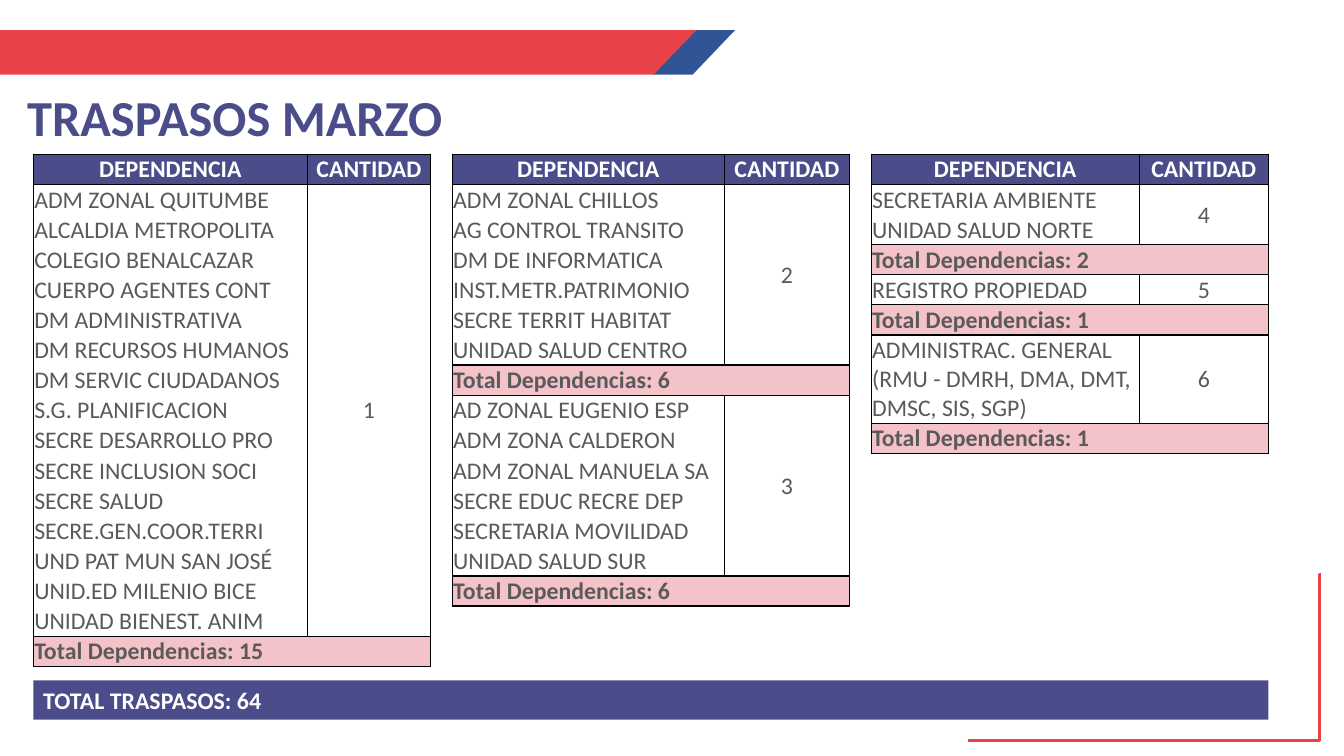
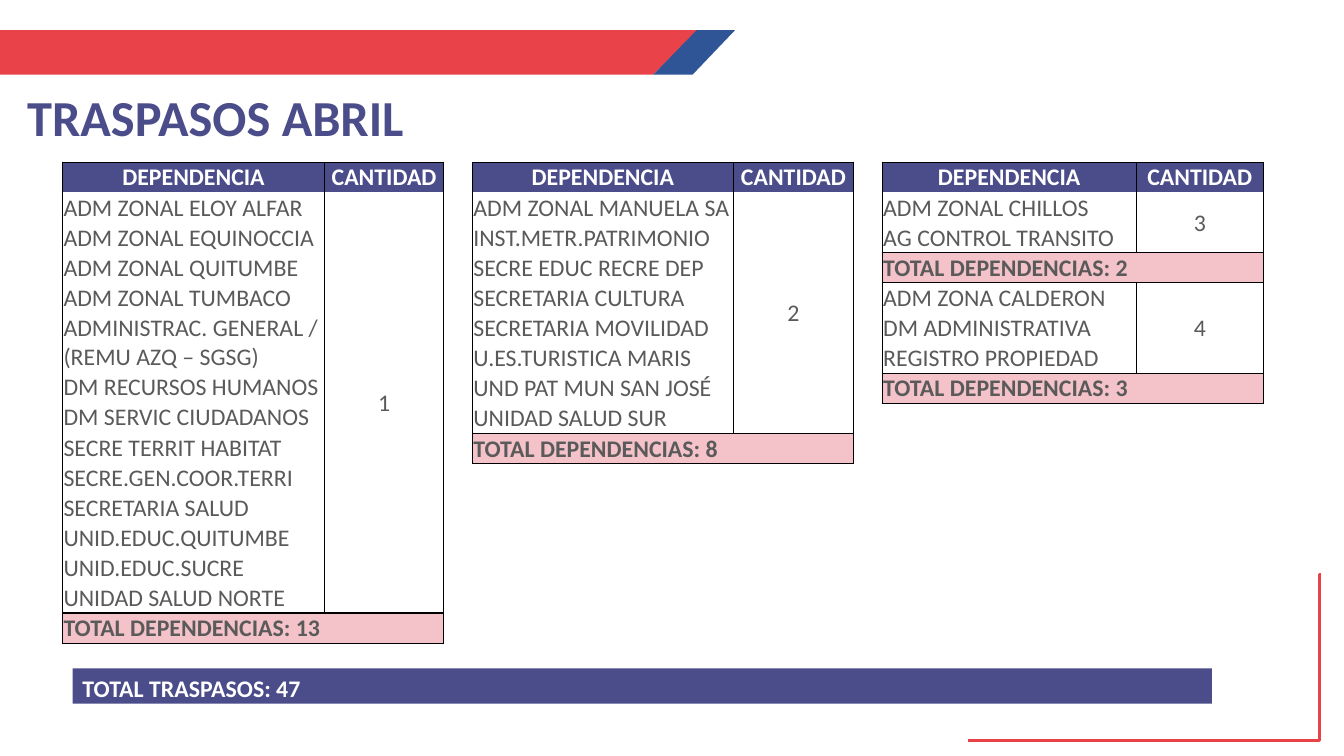
import math

import lxml.etree
import pptx
import pptx.dml.color
import pptx.enum.shapes
import pptx.enum.text
import pptx.oxml.ns
import pptx.util

Inches = pptx.util.Inches
Pt = pptx.util.Pt
qn = pptx.oxml.ns.qn
ALIGN = pptx.enum.text.PP_ALIGN
ANCHOR = pptx.enum.text.MSO_ANCHOR

COLORS = {
    "red": "E94349",
    "blue": "2F5597",
    "indigo": "4B4C8A",
    "pink": "F4C3C9",
    "gray": "5A5A5A",
    "white": "FFFFFF",
    "black": "000000",
}
TITLE_FONT = {"name": "Calibri", "size": Pt(36), "bold": True}
STRONG_FONT = {"name": "Calibri", "size": Pt(17), "bold": True}
PLAIN_FONT = {**STRONG_FONT, "bold": False}
CELL_MARGINS = {
    "margin_left": Inches(0.01),
    "margin_right": Inches(0.01),
    "margin_top": Inches(0.01),
    "margin_bottom": 0,
}
NO_GRID_STYLE = "{2D5ABB26-0587-4C30-8999-92F81FD0307C}"
ROW_HEIGHT = 0.29
LINE_LENGTH = 22

MARCH = {
    "title": "TRASPASOS MARZO",
    "total_label": "Total Dependencias",
    "left": 0.33,
    "right": 12.58,
    "top": 1.53,
    "table_width": 3.94,
    "quantity_widths": [1.22, 1.24, 1.28],
    "side_weight": 0.5,
    "header_edges": "LRTB",
    "bar": (0.33, 6.75, 12.25, 0.39),
    "tables": [
        [(1, ["ADM ZONAL QUITUMBE", "ALCALDIA METROPOLITA", "COLEGIO BENALCAZAR",
              "CUERPO AGENTES CONT", "DM ADMINISTRATIVA", "DM RECURSOS HUMANOS",
              "DM SERVIC CIUDADANOS", "S.G. PLANIFICACION", "SECRE DESARROLLO PRO",
              "SECRE INCLUSION SOCI", "SECRE SALUD", "SECRE.GEN.COOR.TERRI",
              "UND PAT MUN SAN JOSÉ", "UNID.ED MILENIO BICE", "UNIDAD BIENEST. ANIM"])],
        [(2, ["ADM ZONAL CHILLOS", "AG CONTROL TRANSITO", "DM DE INFORMATICA",
              "INST.METR.PATRIMONIO", "SECRE TERRIT HABITAT", "UNIDAD SALUD CENTRO"]),
         (3, ["AD ZONAL EUGENIO ESP", "ADM ZONA CALDERON", "ADM ZONAL MANUELA SA",
              "SECRE EDUC RECRE DEP", "SECRETARIA MOVILIDAD", "UNIDAD SALUD SUR"])],
        [(4, ["SECRETARIA AMBIENTE", "UNIDAD SALUD NORTE"]),
         (5, ["REGISTRO PROPIEDAD"]),
         (6, ["ADMINISTRAC. GENERAL (RMU - DMRH, DMA, DMT, DMSC, SIS, SGP)"])],
    ],
}
APRIL = {
    "title": "TRASPASOS ABRIL",
    "total_label": "TOTAL DEPENDENCIAS",
    "left": 0.62,
    "right": 12.53,
    "top": 1.61,
    "table_width": 3.78,
    "quantity_widths": [1.18, 1.19, 1.26],
    "side_weight": 1,
    "header_edges": "LRT",
    "bar": (0.72, 6.63, 11.3, 0.35),
    "tables": [
        [(1, ["ADM ZONAL ELOY ALFAR", "ADM ZONAL EQUINOCCIA", "ADM ZONAL QUITUMBE",
              "ADM ZONAL TUMBACO", "ADMINISTRAC. GENERAL / (REMU AZQ – SGSG)",
              "DM RECURSOS HUMANOS", "DM SERVIC CIUDADANOS", "SECRE TERRIT HABITAT",
              "SECRE.GEN.COOR.TERRI", "SECRETARIA SALUD", "UNID.EDUC.QUITUMBE",
              "UNID.EDUC.SUCRE", "UNIDAD SALUD NORTE"])],
        [(2, ["ADM ZONAL MANUELA SA", "INST.METR.PATRIMONIO", "SECRE EDUC RECRE DEP",
              "SECRETARIA CULTURA", "SECRETARIA MOVILIDAD", "U.ES.TURISTICA MARIS",
              "UND PAT MUN SAN JOSÉ", "UNIDAD SALUD SUR"])],
        [(3, ["ADM ZONAL CHILLOS", "AG CONTROL TRANSITO"]),
         (4, ["ADM ZONA CALDERON", "DM ADMINISTRATIVA", "REGISTRO PROPIEDAD"])],
    ],
}


def rgb(name):
    """Return the named colour."""
    return pptx.dml.color.RGBColor.from_string(COLORS[name])


def apply_format(target, values):
    """Set every attribute in values on target."""
    for attribute, value in values.items():
        setattr(target, attribute, value)


def write_text(text_frame, text, font, color, alignment=ALIGN.LEFT):
    """Write one formatted paragraph and return it."""
    paragraph = text_frame.paragraphs[0]
    paragraph.text = text
    paragraph.alignment = alignment
    apply_format(paragraph.font, font)
    paragraph.font.color.rgb = rgb(color)
    return paragraph


def fill_shape(shape, color):
    """Give a shape a flat fill with no line or shadow."""
    shape.shadow.inherit = False
    shape.fill.solid()
    shape.fill.fore_color.rgb = rgb(color)
    shape.line.fill.background()


def add_band(slide, points, color):
    """Draw a filled polygon through points given in inches."""
    start, *others = [(Inches(x), Inches(y)) for x, y in points]
    builder = slide.shapes.build_freeform(*start, scale=1.0)
    builder.add_line_segments(others, close=True)
    shape = builder.convert_to_shape()
    fill_shape(shape, color)
    return shape


def add_corner(slide):
    """Draw the bent line of the lower right corner."""
    connector = slide.shapes.add_connector(
        pptx.enum.shapes.MSO_CONNECTOR.ELBOW,
        Inches(9.6), Inches(7.35), Inches(13.1), Inches(5.7))
    connector.line.color.rgb = rgb("red")
    connector.line.width = Pt(2.25)
    properties = connector.element.spPr
    guides = properties.find(qn("a:prstGeom")).find(qn("a:avLst"))
    lxml.etree.SubElement(guides, qn("a:gd"), name="adj1", fmla="val 99600")
    lxml.etree.SubElement(properties, qn("a:effectLst"))
    return connector


def decorate_layout(layout, slide):
    """Build the bands and corner on a slide and move them to its layout."""
    for placeholder in list(layout.placeholders):
        if placeholder.placeholder_format.idx != 0:
            layout.shapes.element.remove(placeholder.element)
    decorations = [
        add_band(slide, [(0, 0.3), (6.92, 0.3), (6.48, 0.74), (0, 0.74)], "red"),
        add_band(slide, [(6.91, 0.3), (7.29, 0.3), (6.87, 0.74), (6.48, 0.74)], "blue"),
        add_corner(slide),
    ]
    for shape in decorations:
        layout.shapes.element.append(shape.element)


def set_title(slide, text):
    """Place and format the slide title."""
    title = slide.shapes.title
    apply_format(title, {"left": Inches(-0.03), "top": Inches(0.87),
                         "width": Inches(5.76), "height": Inches(0.56)})
    apply_format(title.text_frame, {
        "margin_left": Inches(0.3), "vertical_anchor": ANCHOR.TOP,
        "word_wrap": True, "auto_size": pptx.enum.text.MSO_AUTO_SIZE.NONE})
    write_text(title.text_frame, text, TITLE_FONT, "indigo").line_spacing = 0.9


def set_borders(cell, edges, side_weight):
    """Draw black borders on the edges named by L, R, T and B."""
    properties = cell._tc.get_or_add_tcPr()
    for edge in edges:
        weight = side_weight if edge in "LR" else 1
        line = lxml.etree.SubElement(properties, qn(f"a:ln{edge}"), w=str(Pt(weight)))
        fill = lxml.etree.SubElement(line, qn("a:solidFill"))
        lxml.etree.SubElement(fill, qn("a:srgbClr"), val=COLORS["black"])


def format_row(row, edges, side_weight, color=None):
    """Give the cells of a row margins, borders and a fill."""
    for cell in row.cells:
        apply_format(cell, CELL_MARGINS)
        set_borders(cell, edges, side_weight)
        if color:
            cell.fill.solid()
            cell.fill.fore_color.rgb = rgb(color)
        else:
            cell.fill.background()


def add_group(table, first, quantity, names, month):
    """Write the names sharing a quantity and their total row."""
    last = first + len(names) - 1
    for index, name in enumerate(names, first):
        row = table.rows[index]
        row.height = Inches(ROW_HEIGHT * math.ceil(len(name) / LINE_LENGTH))
        format_row(row, "LRB" if index == last else "LR", month["side_weight"])
        write_text(row.cells[0].text_frame, name, PLAIN_FONT, "gray")
    quantity_cell = table.cell(first, 1)
    if last > first:
        quantity_cell.merge(table.cell(last, 1))
    quantity_cell.vertical_anchor = ANCHOR.MIDDLE
    write_text(quantity_cell.text_frame, str(quantity), PLAIN_FONT, "gray", ALIGN.CENTER)
    format_row(table.rows[last + 1], "LRTB", 1, "pink")
    total_cell = table.cell(last + 1, 0)
    total_cell.merge(table.cell(last + 1, 1))
    write_text(total_cell.text_frame, f"{month['total_label']}: {len(names)}",
               STRONG_FONT, "gray")


def add_transfer_table(slide, left, quantity_width, groups, month):
    """Add one table of departments grouped by quantity."""
    row_count = 1 + sum(len(names) + 1 for _, names in groups)
    frame = slide.shapes.add_table(
        row_count, 2, Inches(left), Inches(month["top"]),
        Inches(month["table_width"]), Inches(ROW_HEIGHT * row_count))
    table = frame.table
    apply_format(table, {"first_row": False, "horz_banding": False})
    next(frame.element.iter(qn("a:tableStyleId"))).text = NO_GRID_STYLE
    table.columns[0].width = Inches(month["table_width"] - quantity_width)
    table.columns[1].width = Inches(quantity_width)
    format_row(table.rows[0], month["header_edges"], month["side_weight"], "indigo")
    for cell, heading in zip(table.rows[0].cells, ("DEPENDENCIA", "CANTIDAD")):
        write_text(cell.text_frame, heading, STRONG_FONT, "white", ALIGN.CENTER)
    first = 1
    for quantity, names in groups:
        add_group(table, first, quantity, names, month)
        first += len(names) + 1


def add_total_bar(slide, month):
    """Add the bar with the month's total number of transfers."""
    total = sum(quantity * len(names)
                for groups in month["tables"] for quantity, names in groups)
    bar = slide.shapes.add_shape(
        pptx.enum.shapes.MSO_SHAPE.RECTANGLE, *map(Inches, month["bar"]))
    fill_shape(bar, "indigo")
    apply_format(bar.text_frame, {"word_wrap": True, "vertical_anchor": ANCHOR.TOP})
    write_text(bar.text_frame, f"TOTAL TRASPASOS: {total}", STRONG_FONT, "white")


def fill_month(slide, month):
    """Fill a slide with the title, evenly spaced tables and total bar."""
    set_title(slide, month["title"])
    table_count = len(month["tables"])
    span = month["right"] - month["left"] - month["table_width"]
    pitch = span / (table_count - 1)
    for index, groups in enumerate(month["tables"]):
        add_transfer_table(slide, month["left"] + index * pitch,
                           month["quantity_widths"][index], groups, month)
    add_total_bar(slide, month)


def main():
    """Build and save the presentation."""
    presentation = pptx.Presentation()
    apply_format(presentation, {"slide_width": Inches(13.33), "slide_height": Inches(7.5)})
    layout = presentation.slide_layouts.get_by_name("Title Only")
    slides = [presentation.slides.add_slide(layout) for _ in (MARCH, APRIL)]
    decorate_layout(layout, slides[0])
    for slide, month in zip(slides, (MARCH, APRIL)):
        fill_month(slide, month)
    presentation.save("out.pptx")


if __name__ == "__main__":
    main()
